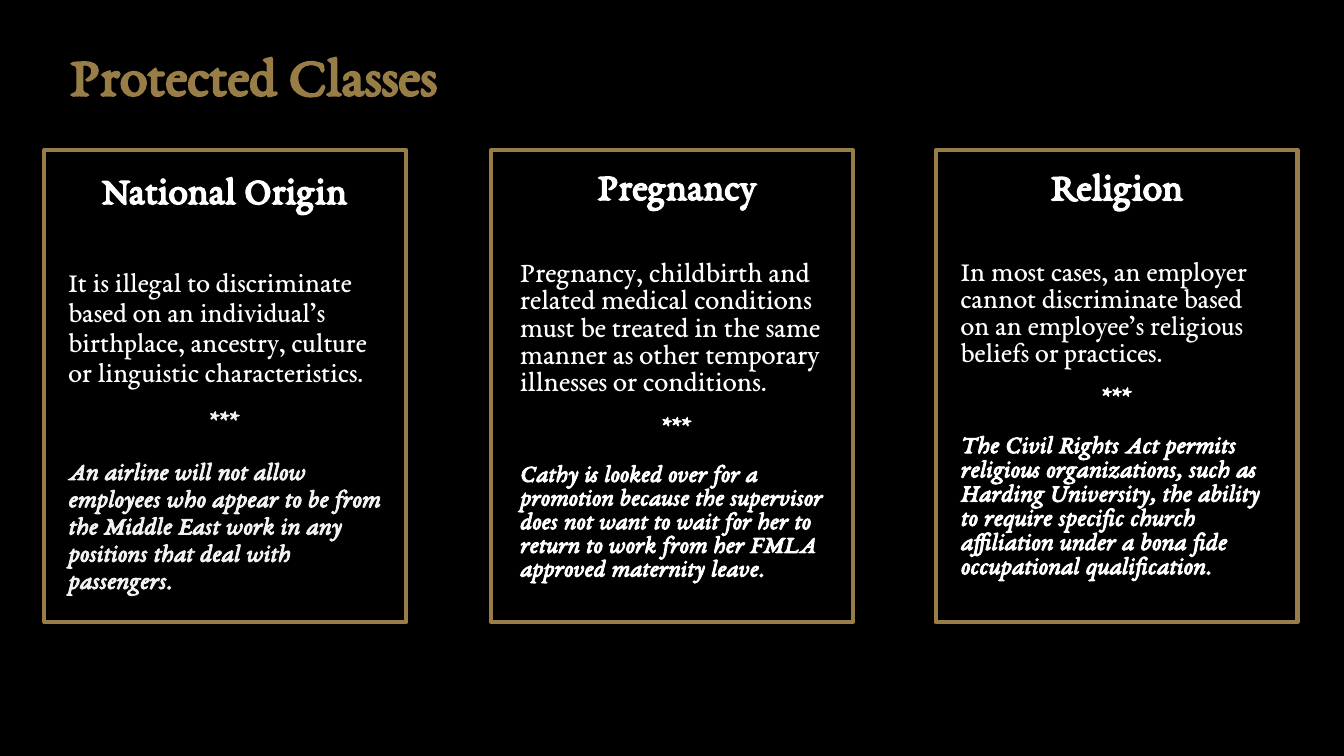
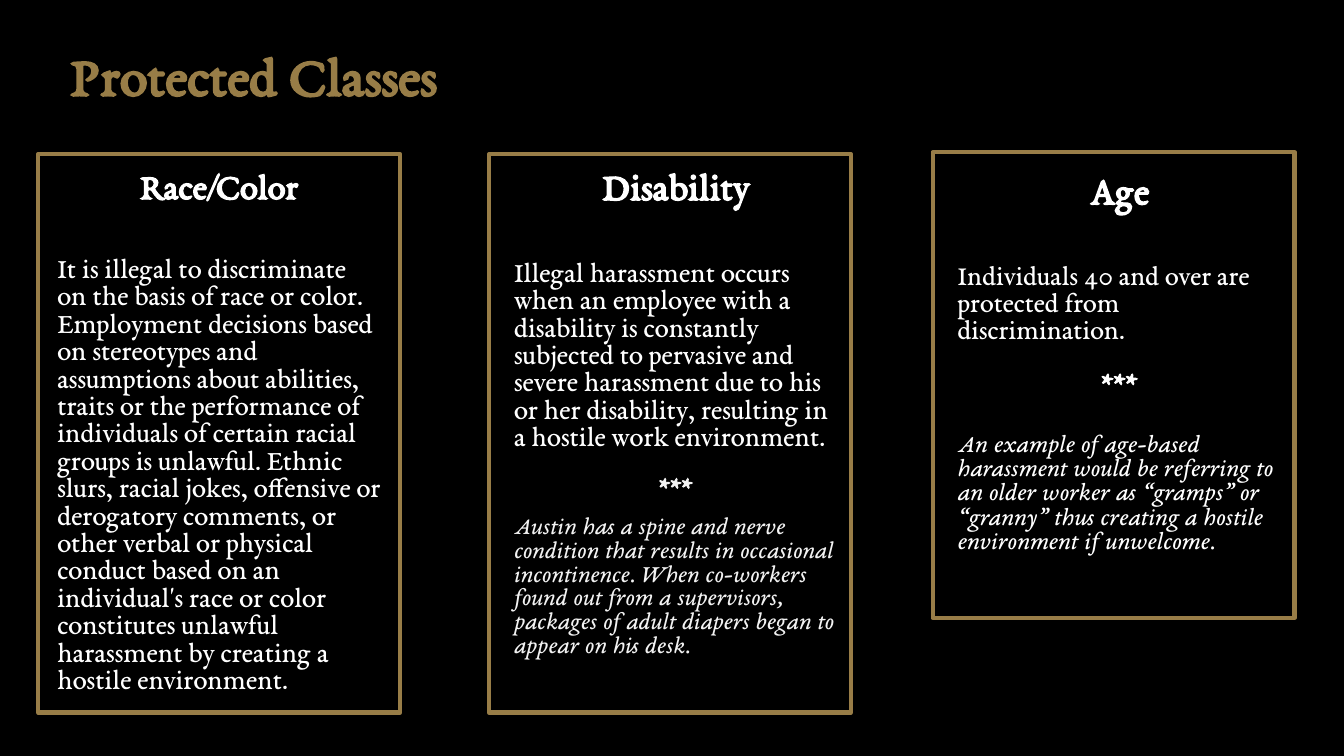
from pptx import Presentation
from pptx.dml.color import RGBColor
from pptx.enum.shapes import MSO_SHAPE
from pptx.enum.text import MSO_ANCHOR, PP_ALIGN
from pptx.util import Inches, Pt

THEME = {
    "font": "EB Garamond",
    "black": "000000",
    "gold": "987D47",
    "white": "FFFFFF",
    "pale": "F2F2F2",
    "title": 40,
    "line": 3,
    "indent": 0.12,
}
TITLE = "Protected Classes"
TITLE_BOX = (0.6, 0.21, 11.5, 1.12)
CARD_W = 3.59

DECKS = [
    [
        {
            "frame": (0.44, 1.49, 4.68), "box": (0.46, 1.64, 3.42, 4.73),
            "pitch": 0.9, "tone": "pale", "bold": True, "slant": True,
            "head": ("National Origin", 28, 0),
            "body": ("It is illegal to discriminate based on an individual’s birthplace, "
                     "ancestry, culture or linguistic characteristics.", 20, 39.6),
            "stars": (18, 12),
            "case": ("An airline will not allow employees who appear to be from the "
                     "Middle East work in any positions that deal with passengers.", 18, 18),
        },
        {
            "frame": (4.87, 1.49, 4.68), "box": (4.94, 1.64, 3.43, 4.53),
            "pitch": 0.8, "tone": "white", "bold": True, "slant": True,
            "head": ("Pregnancy", 27.8, 0),
            "body": ("Pregnancy, childbirth and related medical conditions must be treated "
                     "in the same manner as other temporary illnesses or conditions.", 20.4, 37.6),
            "stars": (17.6, 12),
            "case": ("Cathy is looked over for a promotion because the supervisor does not "
                     "want to wait for her to return to work from her FMLA approved "
                     "maternity leave.", 17.6, 18),
        },
        {
            "frame": (9.28, 1.49, 4.68), "box": (9.31, 1.64, 3.42, 4.48),
            "pitch": 0.8, "tone": "white", "bold": True, "slant": False,
            "head": ("Religion", 28, 0),
            "body": ("In most cases, an employer cannot discriminate based on an "
                     "employee’s religious beliefs or practices.", 20, 37.2),
            "stars": (18, 12),
            "case": ("The Civil Rights Act permits religious organizations, such as Harding "
                     "University, the ability to require specific church affiliation under "
                     "a bona fide occupational qualification.", 18, 18),
        },
    ],
    [
        {
            "frame": (0.38, 1.53, 5.54), "box": (0.35, 1.65, 3.53, 5.29),
            "pitch": 0.8,
            "head": ("Race/Color", 25.9, 0),
            "body": ("It is illegal to discriminate on the basis of race or color. Employment "
                     "decisions based on stereotypes and assumptions about abilities, traits "
                     "or the performance of individuals of certain racial groups is unlawful. "
                     "Ethnic slurs, racial jokes, offensive or derogatory comments, or other "
                     "verbal or physical conduct based on an individual's race or color "
                     "constitutes unlawful harassment by creating a hostile environment.",
                     20.4, 35.9),
        },
        {
            "frame": (4.85, 1.53, 5.54), "box": (4.88, 1.64, 3.53, 5.49),
            "pitch": 0.8, "tone": "pale", "bold": False, "slant": True,
            "head": ("Disability", 27.8, 0),
            "body": ("Illegal harassment occurs when an employee with a disability is "
                     "constantly subjected to pervasive and severe harassment due to his or "
                     "her disability, resulting in a hostile work environment.", 20.4, 37.6),
            "stars": (20.4, 16),
            "case": ("Austin has a spine and nerve condition that results in occasional "
                     "incontinence. When co-workers found out from a supervisors, packages "
                     "of adult diapers began to appear on his desk.", 17.6, 10),
        },
        {
            "frame": (9.25, 1.51, 4.62), "box": (9.28, 1.68, 3.53, 4.15),
            "pitch": 0.8, "tone": "white", "bold": False, "slant": False,
            "head": ("Age", 28, 0),
            "body": ("Individuals 40 and over are protected from discrimination.", 20, 37.2),
            "stars": (22, 18),
            "case": ("An example of age-based harassment would be referring to an older "
                     "worker as “gramps” or “granny” thus creating a hostile environment "
                     "if unwelcome.", 18, 24),
        },
    ],
]


def color(name):
    return RGBColor.from_string(THEME[name])


def add_box(slide, place, anchor=MSO_ANCHOR.TOP):
    frame = slide.shapes.add_textbox(*map(Inches, place)).text_frame
    frame.word_wrap = True
    frame.vertical_anchor = anchor
    return frame


def write(frame, text, size, gap=0, *, tone="white", bold=False, italic=False,
          center=False, pitch=0.9, indent=0):
    first = frame.paragraphs[0]
    para = frame.add_paragraph() if first.runs else first
    para._p.get_or_add_pPr().set("marL", str(Inches(indent)))
    para.alignment = PP_ALIGN.CENTER if center else PP_ALIGN.LEFT
    para.line_spacing = pitch
    para.space_before = Pt(gap)
    run = para.add_run()
    run.text = text
    font = run.font
    font.name, font.size = THEME["font"], Pt(size)
    font.bold, font.italic = bold, italic
    font.color.rgb = color(tone)


def add_card(slide, card):
    left, top, height = card["frame"]
    edge = slide.shapes.add_shape(
        MSO_SHAPE.RECTANGLE, *map(Inches, (left, top, CARD_W, height)))
    edge.shadow.inherit = False
    edge.fill.background()
    edge.line.color.rgb = color("gold")
    edge.line.width = Pt(THEME["line"])

    frame = add_box(slide, card["box"])
    base = {"pitch": card["pitch"], "indent": THEME["indent"]}
    write(frame, *card["head"], bold=True, center=True, **base)
    write(frame, *card["body"], **base)
    if "case" in card:
        base["tone"] = card["tone"]
        write(frame, "***", *card["stars"], bold=True, italic=card["slant"],
              center=True, **base)
        write(frame, *card["case"], bold=card["bold"], italic=True, **base)


def main():
    deck = Presentation()
    deck.slide_width, deck.slide_height = Inches(13.33), Inches(7.5)
    back = deck.slide_master.background.fill
    back.solid()
    back.fore_color.rgb = color("black")
    for cards in DECKS:
        slide = deck.slides.add_slide(deck.slide_layouts[6])
        write(add_box(slide, TITLE_BOX, MSO_ANCHOR.MIDDLE), TITLE,
              THEME["title"], tone="gold", bold=True)
        for card in cards:
            add_card(slide, card)
    deck.save("out.pptx")


if __name__ == "__main__":
    main()
